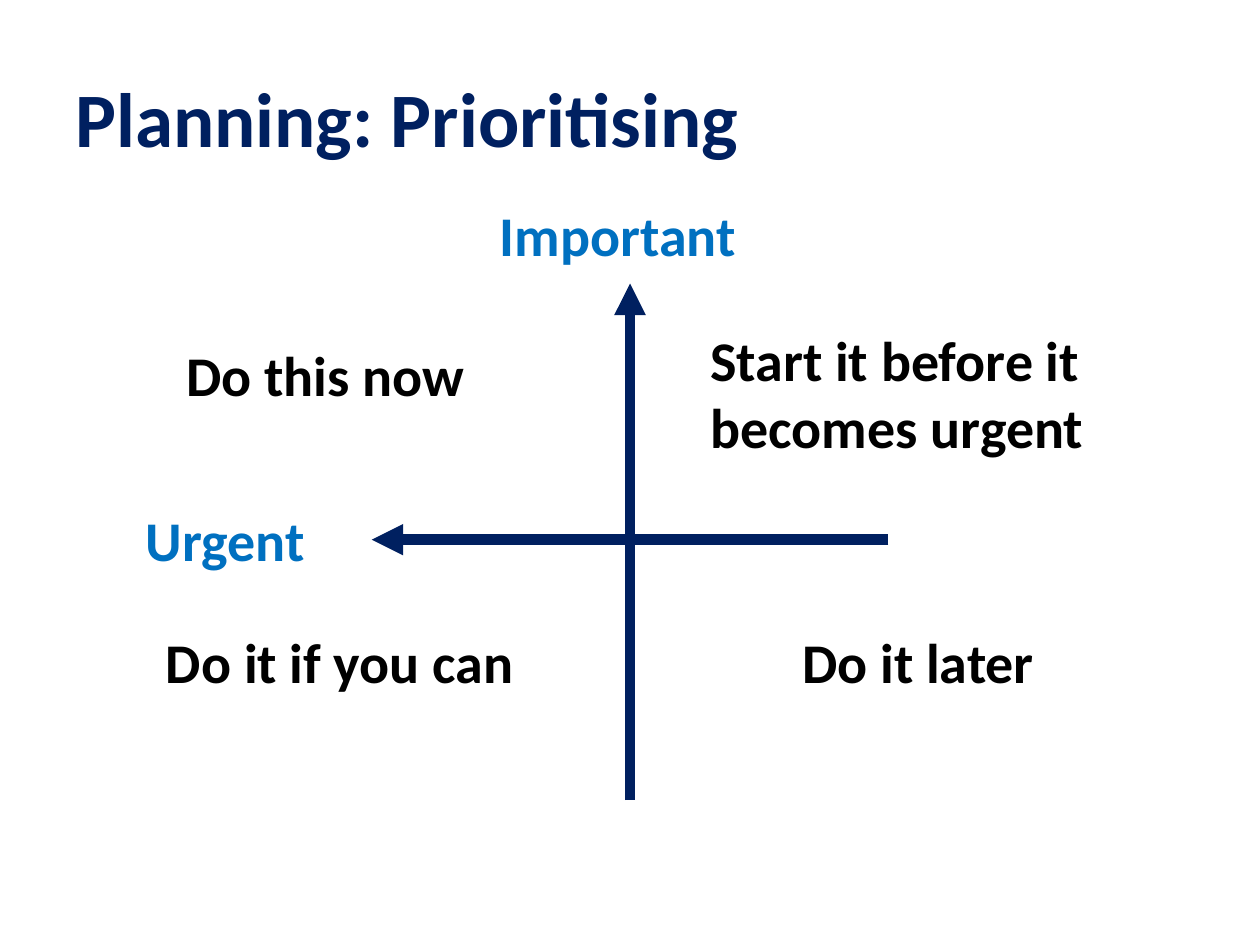
from dataclasses import dataclass

from lxml import etree
from pptx import Presentation
from pptx.dml.color import RGBColor
from pptx.enum import shapes, text
from pptx.oxml import ns
from pptx.util import Pt


@dataclass(frozen=True)
class Theme:
    font: str = "Calibri"
    navy: str = "002060"
    blue: str = "0070C0"
    black: str = "000000"
    title_size: int = 44
    label_size: int = 32
    axis_width: int = 6


THEME = Theme()

# Content: text, (left, top, width, height) in points
TITLE = ("Planning: Prioritising", (36, 21.6, 648, 90))
AXIS_LABELS = [
    ("Important", (278.6, 110.9, 150.5, 46)),
    ("Urgent", (76.3, 285.1, 105.8, 46)),
]
QUADRANTS = [
    ("Do this now", (99.4, 190.8, 204.5, 46)),
    ("Start it before it becomes urgent", (398.9, 182.2, 278.6, 85)),
    ("Do it if you can", (87.8, 355, 244, 46)),
    ("Do it later", (451.4, 355, 171.4, 46)),
]

# Axes cross near the middle of the slide; each arm has the same reach
CENTRE_X, CENTRE_Y = 360, 308.4
REACH = 147.6
AXES = [
    ((CENTRE_X, CENTRE_Y + 151), (CENTRE_X, CENTRE_Y - 146.4)),
    ((CENTRE_X + REACH, CENTRE_Y), (CENTRE_X - REACH, CENTRE_Y)),
]
AXES[0] = ((CENTRE_X, 457.2), (CENTRE_X, 162))


def add_label(page, words, frame, size, color, wrap=True, anchor=text.MSO_ANCHOR.TOP):
    box = page.shapes.add_textbox(*map(Pt, frame))
    box.text_frame.word_wrap = wrap
    box.text_frame.vertical_anchor = anchor
    para = box.text_frame.paragraphs[0]
    para.text = words
    para.font.name = THEME.font
    para.font.size = Pt(size)
    para.font.bold = True
    para.font.color.rgb = RGBColor.from_string(color)


def add_axis(page, start, end):
    axis = page.shapes.add_connector(
        shapes.MSO_CONNECTOR.STRAIGHT, *map(Pt, (*start, *end)))
    axis.line.width = Pt(THEME.axis_width)
    axis.line.color.rgb = RGBColor.from_string(THEME.navy)
    # Arrowhead at the end, no shadow
    outline = axis.line._get_or_add_ln()
    etree.SubElement(outline, ns.qn("a:tailEnd"), type="triangle")
    etree.SubElement(axis._element.spPr, ns.qn("a:effectLst"))


def main():
    deck = Presentation()
    deck.slide_width, deck.slide_height = Pt(720), Pt(540)
    page = deck.slides.add_slide(deck.slide_layouts[6])

    # Title
    add_label(page, *TITLE, THEME.title_size, THEME.navy,
              anchor=text.MSO_ANCHOR.MIDDLE)

    # Axes and their names
    for start, end in AXES:
        add_axis(page, start, end)
    for words, frame in AXIS_LABELS:
        add_label(page, words, frame, THEME.label_size, THEME.blue, wrap=False)

    # Advice in each quadrant
    for words, frame in QUADRANTS:
        add_label(page, words, frame, THEME.label_size, THEME.black)

    deck.save("out.pptx")


if __name__ == "__main__":
    main()
